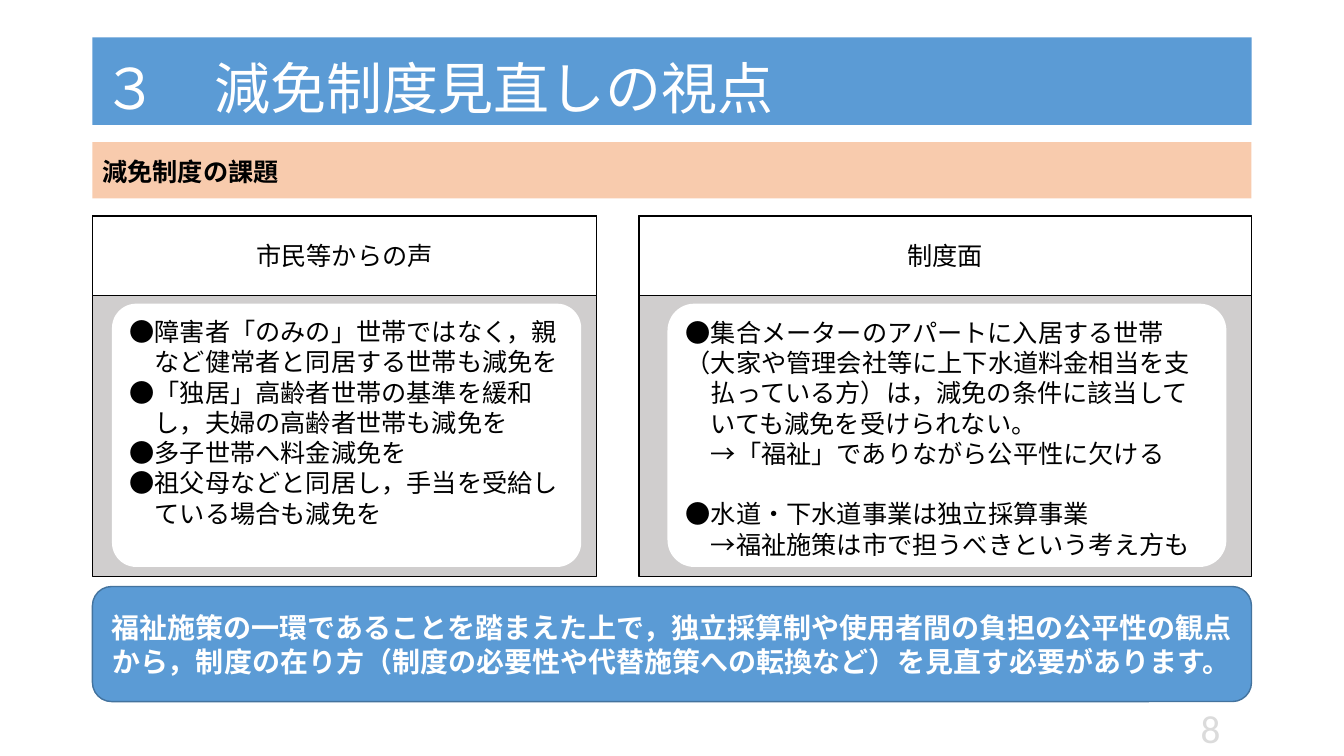
from lxml import etree
from pptx import Presentation
from pptx.dml.color import RGBColor
from pptx.enum.shapes import MSO_SHAPE
from pptx.enum.text import MSO_ANCHOR, MSO_AUTO_SIZE, PP_ALIGN
from pptx.oxml.ns import qn
from pptx.util import Cm, Pt

RECTANGLE = MSO_SHAPE.RECTANGLE
ROUNDED = MSO_SHAPE.ROUNDED_RECTANGLE
TOP, MIDDLE = MSO_ANCHOR.TOP, MSO_ANCHOR.MIDDLE
LEFT, CENTER, RIGHT = PP_ALIGN.LEFT, PP_ALIGN.CENTER, PP_ALIGN.RIGHT
NO_AUTOFIT = MSO_AUTO_SIZE.NONE

BLUE = RGBColor(0x5B, 0x9B, 0xD5)
DARK_BLUE = RGBColor(0x43, 0x73, 0x9E)
PEACH = RGBColor(0xF8, 0xCB, 0xAD)
GRAY = RGBColor(0xD0, 0xCE, 0xCE)
PALE_GRAY = RGBColor(0xDB, 0xDB, 0xDB)
BLACK = RGBColor(0, 0, 0)
WHITE = RGBColor(0xFF, 0xFF, 0xFF)

MARGIN, CONTENT_WIDTH = 2.33, 29.21
PANEL_TOP, PANEL_HEIGHT, HEADER_HEIGHT = 5.44, 9.09, 2.01
CARD_TOP, CARD_HEIGHT = 7.67, 6.6

CITIZEN_LINES = [
    "●障害者「のみの」世帯ではなく，親",
    "など健常者と同居する世帯も減免を",
    "●「独居」高齢者世帯の基準を緩和",
    "し，夫婦の高齢者世帯も減免を",
    "●多子世帯へ料金減免を",
    "●祖父母などと同居し，手当を受給し",
    "ている場合も減免を",
]
SYSTEM_LINES = [
    "●集合メーターのアパートに入居する世帯（大家や管理会社等に上下水道料金相当を支",
    "払っている方）は，減免の条件に該当して",
    "いても減免を受けられない。",
    "→「福祉」でありながら公平性に欠ける",
    "●水道・下水道事業は独立採算事業",
    "→福祉施策は市で担うべきという考え方も",
]
CONCLUSION = (
    "福祉施策の一環であることを踏まえた上で，独立採算制や使用者間の負担の公平性の観点"
    "から，制度の在り方（制度の必要性や代替施策への転換など）を見直す必要があります。"
)


class SlideBuilder:
    font_name = "Noto Sans CJK JP"
    text_size = 18
    line_ratio = 1.2

    def __init__(self, presentation):
        self.slide = presentation.slides.add_slide(presentation.slide_layouts[5])

    def style(self, paragraph, size, color, bold=False, align=LEFT, font_name=font_name):
        paragraph.alignment = align
        paragraph.line_spacing = Pt(size * self.line_ratio)
        font = paragraph.font
        font.name, font.size, font.bold = font_name, Pt(size), bold
        font.color.rgb = color
        properties = paragraph._p.get_or_add_pPr().find(qn("a:defRPr"))
        etree.SubElement(properties, qn("a:ea")).set("typeface", font_name)

    def frame(self, shape, anchor=MIDDLE, top_inset=0.13):
        text_frame = shape.text_frame
        text_frame.word_wrap = True
        text_frame.auto_size = NO_AUTOFIT
        text_frame.vertical_anchor = anchor
        text_frame.margin_left = text_frame.margin_right = Cm(0.25)
        text_frame.margin_top, text_frame.margin_bottom = Cm(top_inset), Cm(0.13)
        return text_frame

    def text(self, shape, text, size, color, top_inset=0.13, **options):
        paragraph = self.frame(shape, top_inset=top_inset).paragraphs[0]
        paragraph.text = text
        self.style(paragraph, size, color, **options)

    def title(self, text, left, top, width, height):
        title = self.slide.shapes.title
        title.left, title.top = Cm(left), Cm(top)
        title.width, title.height = Cm(width), Cm(height)
        title.fill.solid()
        title.fill.fore_color.rgb = BLUE
        self.text(title, text, 40, WHITE, top_inset=0.43)

    def box(self, kind, left, top, width, height, fill, line=None, radius=None):
        shape = self.slide.shapes.add_shape(kind, Cm(left), Cm(top), Cm(width), Cm(height))
        shape.shadow.inherit = False
        shape.fill.solid()
        shape.fill.fore_color.rgb = fill
        if line is None:
            shape.line.fill.background()
        else:
            shape.line.color.rgb = line
            shape.line.width = Pt(1)
        if radius is not None:
            shape.adjustments[0] = radius
        return shape

    def card_lines(self, card, lines, gap_before=None):
        text_frame = self.frame(card, TOP)
        for index, line in enumerate(lines):
            paragraph = text_frame.add_paragraph() if index else text_frame.paragraphs[0]
            paragraph.text = line
            self.style(paragraph, self.text_size, BLACK)
            if not line.startswith("●"):
                paragraph._p.get_or_add_pPr().set("marL", str(Pt(self.text_size)))
            if index == gap_before:
                paragraph.space_before = Pt(self.text_size * self.line_ratio)

    def panel(self, heading, left, width, card_left, card_width, radius, lines, gap_before=None):
        self.box(RECTANGLE, left, PANEL_TOP, width, PANEL_HEIGHT, GRAY, BLACK)
        header = self.box(RECTANGLE, left, PANEL_TOP, width, HEADER_HEIGHT, WHITE, BLACK)
        self.text(header, heading, self.text_size, BLACK, align=CENTER)
        card = self.box(ROUNDED, card_left, CARD_TOP, card_width, CARD_HEIGHT, WHITE, WHITE, radius)
        self.card_lines(card, lines, gap_before)

    def page_number(self, text, left, top, width, height):
        box = self.slide.shapes.add_textbox(Cm(left), Cm(top), Cm(width), Cm(height))
        self.text(box, text, 28, PALE_GRAY, align=RIGHT, font_name="Calibri")


def main():
    presentation = Presentation()
    presentation.slide_width, presentation.slide_height = Cm(33.87), Cm(19.05)
    builder = SlideBuilder(presentation)
    builder.title("３　減免制度見直しの視点", MARGIN, 0.94, CONTENT_WIDTH, 2.21)
    subtitle = builder.box(RECTANGLE, MARGIN, 3.58, CONTENT_WIDTH, 1.42, PEACH)
    builder.text(subtitle, "減免制度の課題", 18, BLACK, bold=True, top_inset=0.2)
    builder.panel("市民等からの声", MARGIN, 12.7, 2.84, 11.79, 0.09, CITIZEN_LINES)
    builder.panel("制度面", 16.1, 15.44, 16.84, 14.05, 0.1, SYSTEM_LINES, gap_before=4)
    conclusion = builder.box(ROUNDED, MARGIN, 14.78, CONTENT_WIDTH, 2.9, BLUE, DARK_BLUE)
    builder.text(conclusion, CONCLUSION, 20, WHITE, bold=True, align=CENTER)
    builder.page_number("8", 23.39, 17.83, 7.62, 1.02)
    presentation.save("out.pptx")


if __name__ == "__main__":
    main()
